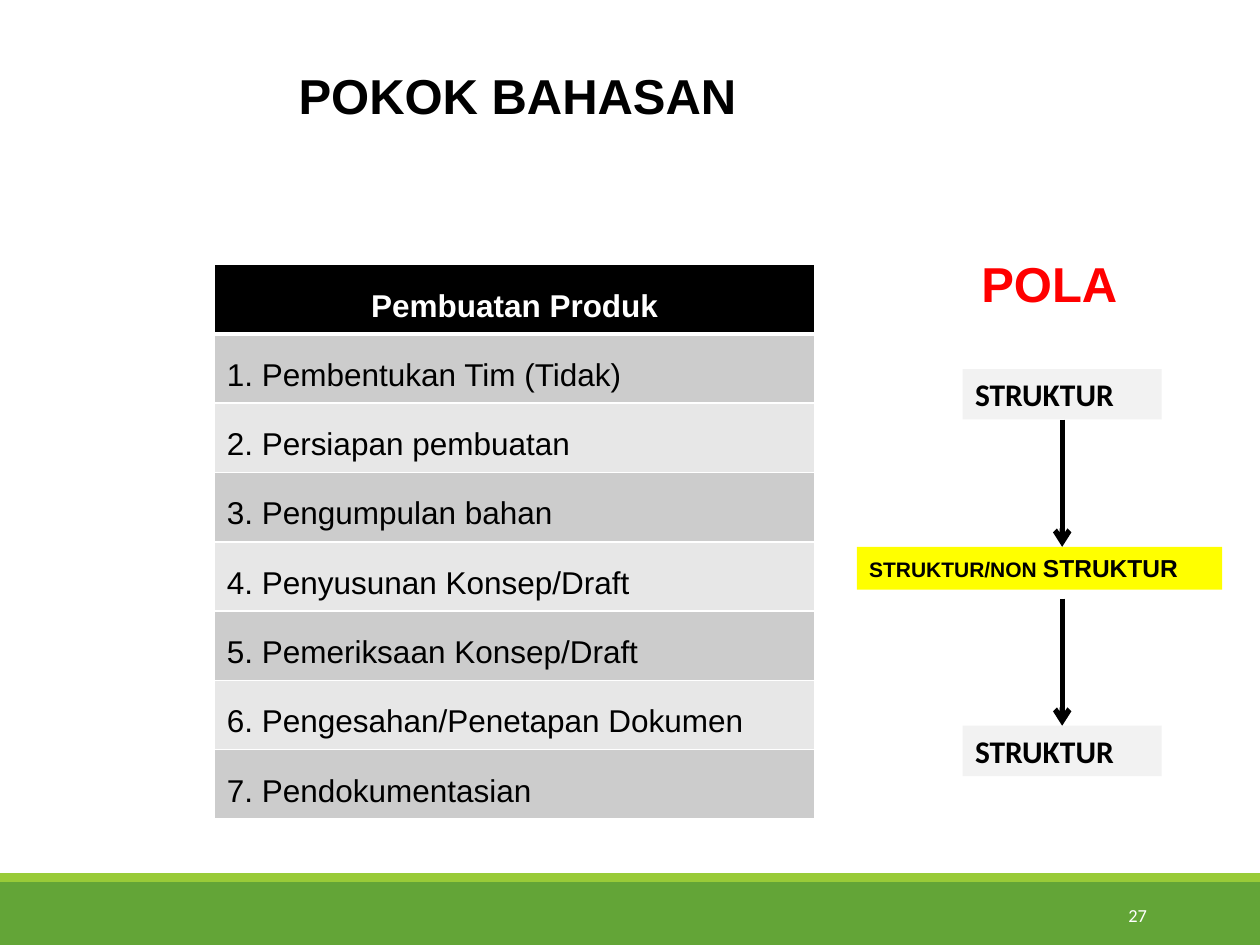
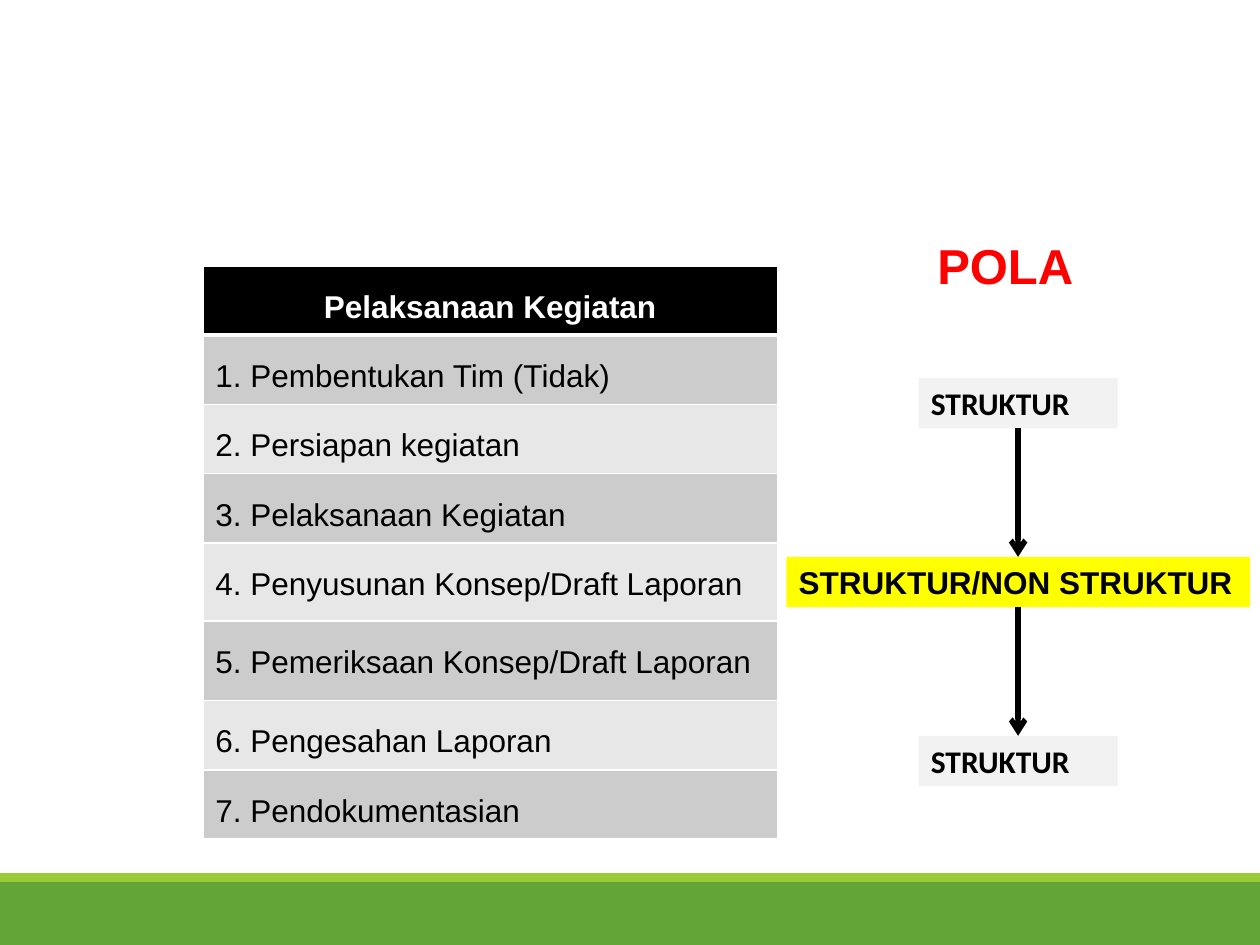
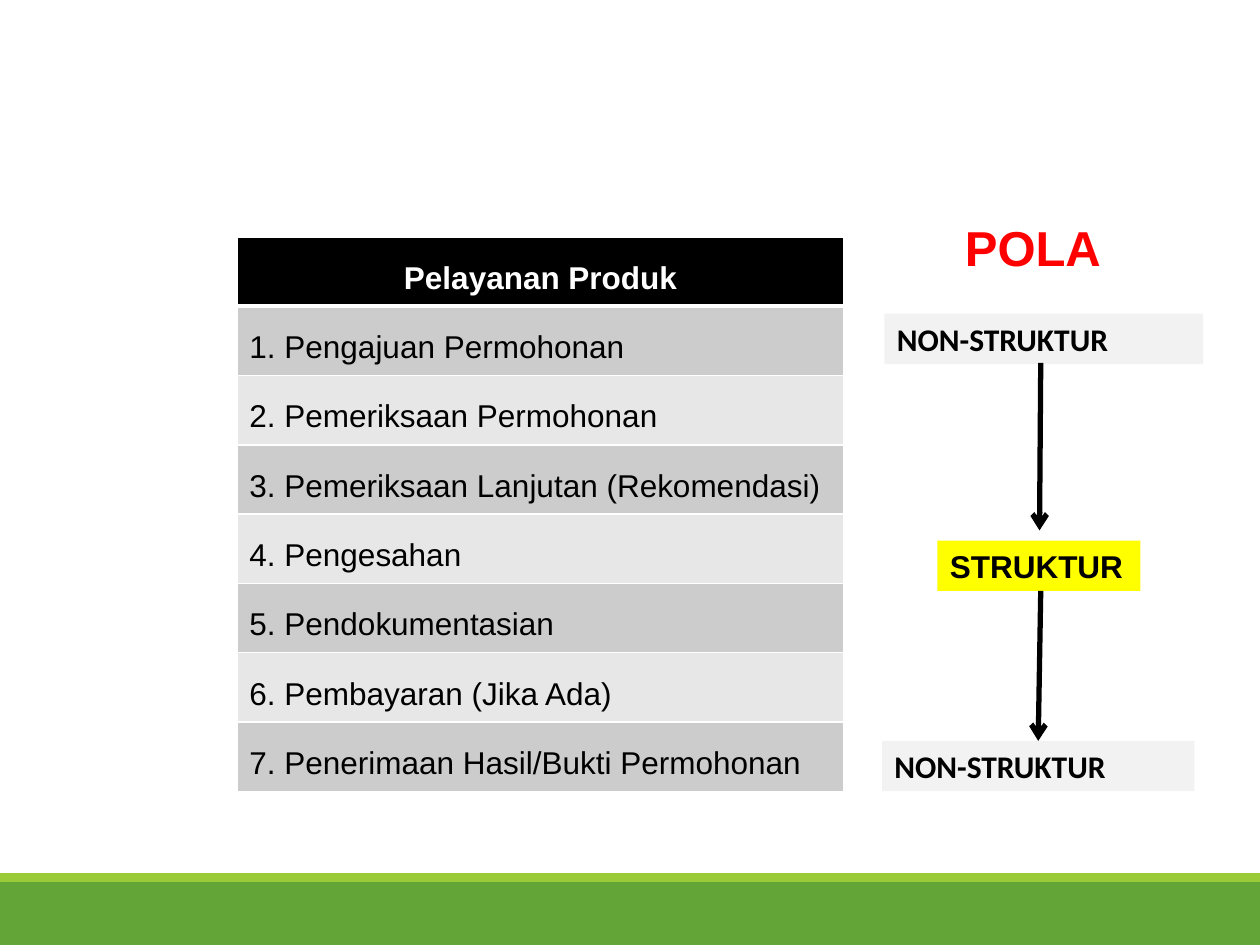
from lxml import etree
from pptx import Presentation
from pptx.dml.color import RGBColor
from pptx.enum.shapes import MSO_CONNECTOR, MSO_SHAPE
from pptx.enum.text import MSO_ANCHOR, MSO_AUTO_SIZE, PP_ALIGN
from pptx.oxml import parse_xml
from pptx.oxml.ns import nsdecls, qn
from pptx.util import Inches, Pt

BLACK = RGBColor(0x00, 0x00, 0x00)
WHITE = RGBColor(0xFF, 0xFF, 0xFF)
RED = RGBColor(0xFF, 0x00, 0x00)
YELLOW = RGBColor(0xFF, 0xFF, 0x00)
PALE_GREY = RGBColor(0xF2, 0xF2, 0xF2)
DARK_GREEN = RGBColor(0x63, 0xA5, 0x37)
LIGHT_GREEN = RGBColor(0x99, 0xCB, 0x38)
ROW_FILLS = (RGBColor(0xE7, 0xE7, 0xE7), RGBColor(0xCC, 0xCC, 0xCC))

HEADING = dict(name="Arial", size=Pt(28), bold=True)
LABEL = dict(name="Arial", size=Pt(18), bold=True)
ROLE = dict(name="Calibri", size=Pt(18), bold=True)
PAGE_NUMBER = dict(name="Calibri", size=Pt(10.5), bold=False)
ROW_HEIGHT = 0.55
JOIN_TOLERANCE = Inches(0.01)

TOPICS = [
    dict(
        title="POKOK BAHASAN",
        number="27",
        table=(1.7, 2.1, 4.77),
        heights={},
        rows=["Pembuatan Produk", "Pembentukan Tim (Tidak)", "Persiapan pembuatan",
              "Pengumpulan bahan", "Penyusunan Konsep/Draft", "Pemeriksaan Konsep/Draft",
              "Pengesahan/Penetapan Dokumen", "Pendokumentasian"],
        heading=(7.69, 1.96, 1.29, 0.57),
        outer="STRUKTUR",
        boxes=[(7.64, 2.93, 1.58, 0.4), (6.8, 4.34, 2.9, 0.34), (7.64, 5.76, 1.58, 0.4)],
        middle=[("STRUKTUR/NON ", 12), ("STRUKTUR", 14)],
        arrows=[(8.43, 3.33, 8.43, 4.34), (8.43, 4.75, 8.43, 5.76)],
    ),
    dict(
        table=(1.61, 2.11, 4.56),
        heights={4: 0.62, 5: 0.63},
        rows=["Pelaksanaan Kegiatan", "Pembentukan Tim (Tidak)", "Persiapan kegiatan",
              "Pelaksanaan Kegiatan", "Penyusunan Konsep/Draft Laporan",
              "Pemeriksaan Konsep/Draft Laporan", "Pengesahan Laporan", "Pendokumentasian"],
        heading=(7.34, 1.82, 1.29, 0.57),
        outer="STRUKTUR",
        boxes=[(7.29, 3, 1.58, 0.4), (6.24, 4.42, 3.68, 0.4), (7.29, 5.84, 1.58, 0.4)],
        middle=[("STRUKTUR/NON STRUKTUR", 18)],
        arrows=[(8.08, 3.4, 8.08, 4.42), (8.08, 4.82, 8.08, 5.84)],
    ),
    dict(
        table=(1.88, 1.88, 4.82),
        heights={},
        rows=["Pelayanan Produk", "Pengajuan Permohonan", "Pemeriksaan Permohonan",
              "Pemeriksaan Lanjutan (Rekomendasi)", "Pengesahan", "Pendokumentasian",
              "Pembayaran (Jika Ada)", "Penerimaan Hasil/Bukti Permohonan"],
        heading=(7.56, 1.68, 1.31, 0.57),
        outer="NON-STRUKTUR",
        boxes=[(7.02, 2.49, 2.53, 0.4), (7.44, 4.29, 1.61, 0.4), (7, 5.88, 2.48, 0.4)],
        middle=[("STRUKTUR", 18)],
        arrows=[(8.26, 2.88, 8.25, 4.21), (8.26, 4.69, 8.24, 5.88)],
    ),
]


def inches(values):
    """Convert a sequence of numbers to lengths."""
    return [Inches(value) for value in values]


def add_span(para, text, style, color):
    """Append a formatted run to a paragraph."""
    span = para.add_run()
    span.text = text
    for key, value in style.items():
        setattr(span.font, key, value)
    span.font.color.rgb = color


def write(box, spans, color, align=PP_ALIGN.LEFT, anchor=MSO_ANCHOR.TOP):
    """Fill a box with one paragraph of (text, style) spans."""
    frame = box.text_frame
    settings = dict(word_wrap=True, auto_size=MSO_AUTO_SIZE.NONE, vertical_anchor=anchor)
    for key, value in settings.items():
        setattr(frame, key, value)
    para = frame.paragraphs[0]
    para.alignment = align
    for text, style in spans:
        add_span(para, text, style, color)


def add_rectangle(page, place, fill):
    """Add a plain filled rectangle."""
    box = page.shapes.add_shape(MSO_SHAPE.RECTANGLE, *inches(place))
    box.shadow.inherit = False
    box.fill.solid()
    box.fill.fore_color.rgb = fill
    box.line.fill.background()
    return box


def add_bands(layout, page):
    """Give the layout its two footer bands, drawn by way of a page."""
    bands = [((0, 7, 10, 0.5), DARK_GREEN), ((0, 6.93, 10, 0.07), LIGHT_GREEN)]
    for index, (place, fill) in enumerate(bands):
        layout.shapes.element.insert(2 + index, add_rectangle(page, place, fill).element)


def set_title(page, text):
    """Place the title, or remove its placeholder when there is none."""
    title = page.shapes.title
    if not text:
        title.element.getparent().remove(title.element)
        return
    title.left, title.top, title.width, title.height = inches((2.27, 0.47, 7.73, 0.57))
    write(title, [(text, HEADING)], BLACK)


def set_borders(cell, top, bottom):
    """Draw white borders around a cell, with the given top and bottom widths."""
    properties = cell._tc.get_or_add_tcPr()
    for side, width in dict(L=1, R=1, T=top, B=bottom).items():
        properties.append(parse_xml(
            f'<a:ln{side} {nsdecls("a")} w="{Pt(width)}"><a:solidFill>'
            f'<a:srgbClr val="{WHITE}"/></a:solidFill></a:ln{side}>'))


def add_steps(page, place, rows, heights):
    """Add the table with a header and numbered steps."""
    left, top, width = place
    row_heights = [heights.get(index, ROW_HEIGHT) for index in range(len(rows))]
    table = page.shapes.add_table(
        len(rows), 1, *inches((left, top, width, sum(row_heights)))).table
    table.horz_banding = False
    for index, text in enumerate(rows):
        header = index == 0
        table.rows[index].height = Inches(row_heights[index])
        cell = table.cell(index, 0)
        set_borders(cell, 3 if index == 1 else 1, 3 if header else 1)
        cell.fill.solid()
        cell.fill.fore_color.rgb = BLACK if header else ROW_FILLS[index % 2]
        para = cell.text_frame.paragraphs[0]
        spacing = dict(line_spacing=1.5, space_before=Pt(6), space_after=Pt(6),
                       alignment=PP_ALIGN.CENTER if header else PP_ALIGN.LEFT)
        for key, value in spacing.items():
            setattr(para, key, value)
        add_span(para, text if header else f"{index}. {text}",
                 dict(LABEL, bold=header), WHITE if header else BLACK)


def at_middle(box, x, y, edge):
    """Tell whether a point is at the middle of a horizontal edge of a box."""
    return (abs(box.left + box.width // 2 - x) <= JOIN_TOLERANCE
            and abs(edge - y) <= JOIN_TOLERANCE)


def add_arrow(page, points, source, target):
    """Add a downward arrow, joined to its boxes where it meets their middles."""
    x1, y1, x2, y2 = inches(points)
    arrow = page.shapes.add_connector(MSO_CONNECTOR.STRAIGHT, x1, y1, x2, y2)
    arrow.line.color.rgb = BLACK
    arrow.line.width = Pt(3)
    etree.SubElement(arrow.line._get_or_add_ln(), qn("a:tailEnd"), type="arrow")
    etree.SubElement(arrow.element.spPr, qn("a:effectLst"))
    if at_middle(source, x1, y1, source.top + source.height):
        arrow.begin_connect(source, 2)
    if at_middle(target, x2, y2, target.top):
        arrow.end_connect(target, 0)


def add_pattern(page, topic):
    """Add the heading and the flow of three boxes."""
    heading = page.shapes.add_textbox(*inches(topic["heading"]))
    write(heading, [("POLA", HEADING)], RED)
    outer = [(topic["outer"], ROLE)]
    middle = [(text, dict(LABEL, size=Pt(size))) for text, size in topic["middle"]]
    boxes = []
    for place, spans, fill in zip(topic["boxes"], (outer, middle, outer),
                                  (PALE_GREY, YELLOW, PALE_GREY)):
        box = add_rectangle(page, place, fill)
        write(box, spans, BLACK)
        boxes.append(box)
    for points, source, target in zip(topic["arrows"], boxes, boxes[1:]):
        add_arrow(page, points, source, target)


def add_page_number(page, number):
    """Write the page number on the footer band."""
    box = page.shapes.add_textbox(*inches((8.12, 7.06, 1.08, 0.4)))
    write(box, [(number, PAGE_NUMBER)], WHITE, PP_ALIGN.RIGHT, MSO_ANCHOR.MIDDLE)


def add_topic(deck, layout, topic):
    """Build one slide with its steps and pattern."""
    page = deck.slides.add_slide(layout)
    set_title(page, topic.get("title"))
    add_steps(page, topic["table"], topic["rows"], topic["heights"])
    add_pattern(page, topic)
    if "number" in topic:
        add_page_number(page, topic["number"])
    return page


def main():
    """Build and save the deck."""
    deck = Presentation()
    deck.slide_width, deck.slide_height = Inches(10), Inches(7.5)
    layout = deck.slide_layouts.get_by_name("Title Only")
    pages = [add_topic(deck, layout, topic) for topic in TOPICS]
    add_bands(layout, pages[0])
    deck.save("out.pptx")


if __name__ == "__main__":
    main()
